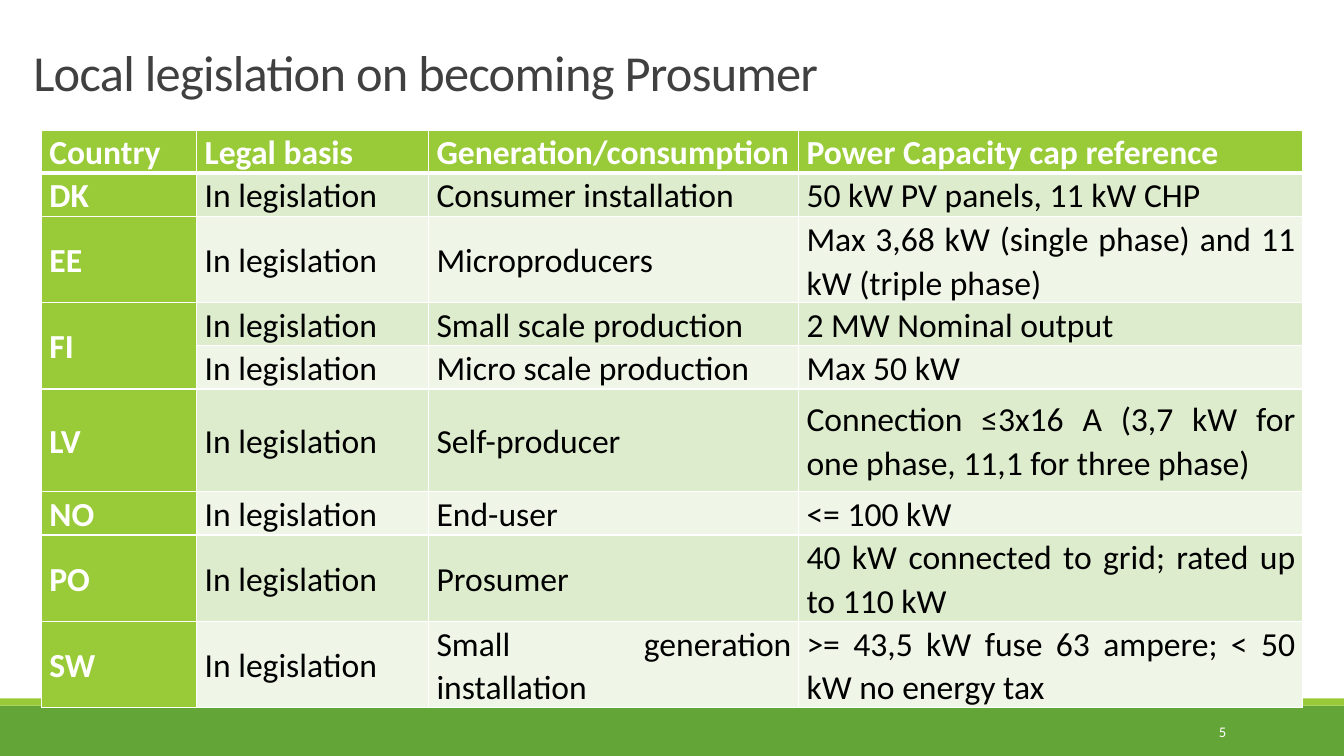
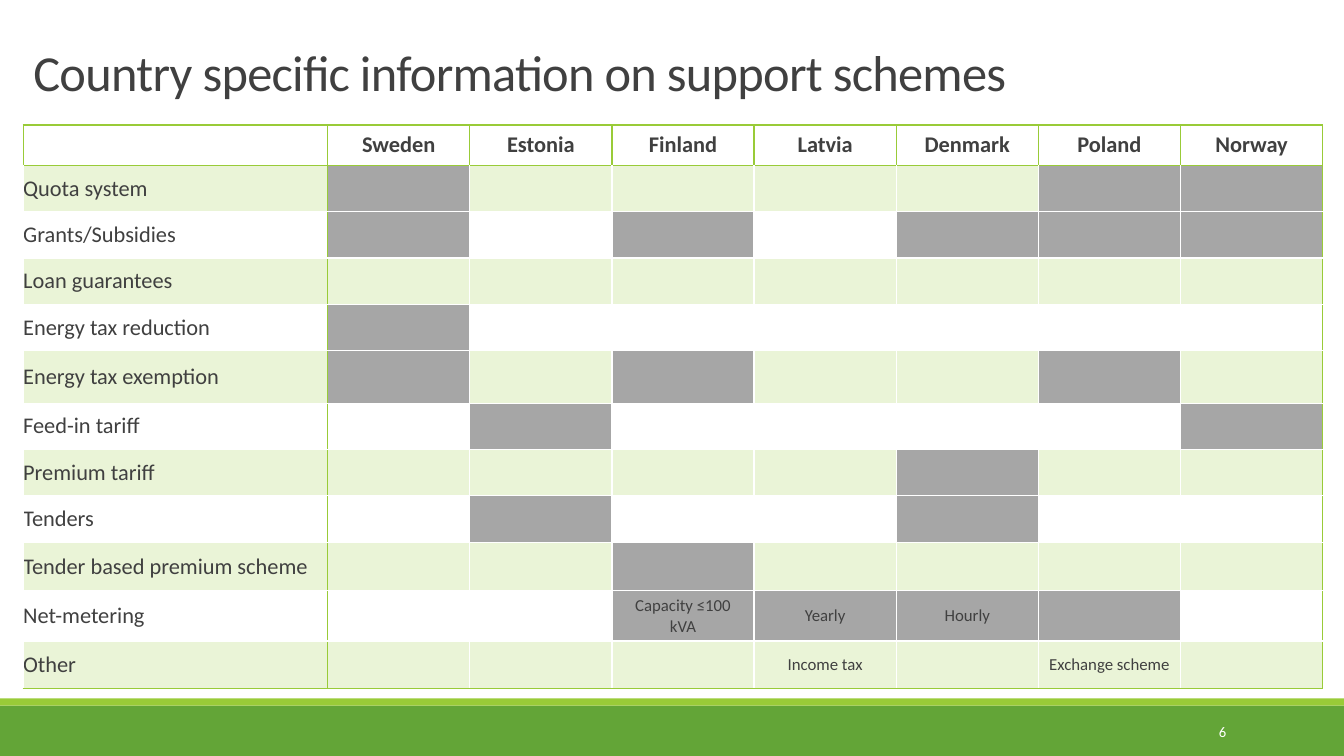
from dataclasses import dataclass

from lxml import etree
from pptx import Presentation
from pptx import util as u
from pptx.dml.color import RGBColor
from pptx.enum import shapes, text
from pptx.oxml.ns import qn

ALIGN = text.PP_ALIGN
MIDDLE = text.MSO_ANCHOR.MIDDLE


@dataclass(frozen=True)
class Theme:
    font: str = "Calibri"
    white: str = "FFFFFF"
    black: str = "000000"
    ink: str = "404040"
    lime: str = "99CB38"
    green: str = "63A537"
    grey: str = "A6A6A6"
    band_dark: str = "DEECCE"
    band_light: str = "EFF6E8"
    title_pt: float = 36
    large_pt: float = 24
    body_pt: float = 16
    note_pt: float = 12
    number_pt: float = 10.5


T = Theme()

LEGISLATION = [
    ("Country", "Legal basis", "Generation/consumption", "Power Capacity cap reference"),
    ("DK", "In legislation", "Consumer installation", "50 kW PV panels, 11 kW CHP"),
    ("EE", "In legislation", "Microproducers",
     "Max 3,68 kW (single phase) and 11 kW (triple phase)"),
    ("FI", "In legislation", "Small scale production", "2 MW Nominal output"),
    ("", "In legislation", "Micro scale production", "Max 50 kW"),
    ("LV", "In legislation", "Self-producer",
     "Connection ≤3x16 A (3,7 kW for one phase, 11,1 for three phase)"),
    ("NO", "In legislation", "End-user", "<= 100 kW"),
    ("PO", "In legislation", "Prosumer", "40 kW connected to grid; rated up to 110 kW"),
    ("SW", "In legislation", "Small generation installation",
     ">= 43,5 kW fuse 63 ampere; < 50 kW no energy tax"),
]

COUNTRIES = ["Sweden", "Estonia", "Finland", "Latvia", "Denmark", "Poland", "Norway"]

# Scheme, row height, countries that use it (#)
SCHEMES = [
    ("Quota system", 0.46, "#....##"),
    ("Grants/Subsidies", 0.46, "#.#.###"),
    ("Loan guarantees", 0.46, "......."),
    ("Energy tax reduction", 0.46, "#......"),
    ("Energy tax exemption", 0.52, "#.#..#."),
    ("Feed-in tariff", 0.46, ".#....#"),
    ("Premium tariff", 0.46, "....#.."),
    ("Tenders", 0.46, ".#..#.."),
    ("Tender based premium scheme", 0.48, "..#...."),
    ("Net-metering", 0.46, "..####."),
    ("Other", 0.47, "......."),
]

SCHEME_NOTES = {
    ("Net-metering", "Finland"): "Capacity ≤100 kVA",
    ("Net-metering", "Latvia"): "Yearly",
    ("Net-metering", "Denmark"): "Hourly",
    ("Other", "Latvia"): "Income tax",
    ("Other", "Poland"): "Exchange scheme",
}


def rgb(color):
    return RGBColor.from_string(color)


def style(p, size, color, bold=False, align=ALIGN.LEFT):
    p.alignment = align
    p.font.name = T.font
    p.font.size = u.Pt(size)
    p.font.bold = bold
    p.font.color.rgb = rgb(color)


def margins(target, x, y):
    target.margin_left = target.margin_right = u.Inches(x)
    target.margin_top = target.margin_bottom = u.Inches(y)


# Shared slide parts
def add_band(s, top, height, color):
    sp = s.shapes.add_shape(shapes.MSO_SHAPE.RECTANGLE, 0, u.Inches(top),
                            u.Inches(13.33), u.Inches(height))
    sp.shadow.inherit = False
    sp.fill.solid()
    sp.fill.fore_color.rgb = rgb(color)
    sp.line.fill.background()


def add_number(s, number):
    sp = s.shapes.add_textbox(u.Inches(10.83), u.Inches(7.06),
                              u.Inches(1.43), u.Inches(0.4))
    tf = sp.text_frame
    tf.word_wrap = True
    tf.vertical_anchor = MIDDLE
    p = tf.paragraphs[0]
    p.text = str(number)
    style(p, T.number_pt, T.white, align=ALIGN.RIGHT)


def add_slide(prs, title, number):
    s = prs.slides.add_slide(prs.slide_layouts[5])
    add_band(s, 7, 0.5, T.green)
    add_band(s, 6.93, 0.07, T.lime)
    sp = s.shapes.title
    sp.left, sp.top = u.Inches(0.23), u.Inches(0.27)
    sp.width, sp.height = u.Inches(11), u.Inches(0.79)
    tf = sp.text_frame
    tf.auto_size = text.MSO_AUTO_SIZE.NONE
    tf.vertical_anchor = text.MSO_ANCHOR.BOTTOM
    p = tf.paragraphs[0]
    p.line_spacing = 0.85
    r = p.add_run()
    r.text = title
    r._r.get_or_add_rPr().set("spc", "-50")
    style(p, T.title_pt, T.ink)
    add_number(s, number)
    return s


# Table helpers
def add_grid(s, left, top, cols, rows):
    frame = s.shapes.add_table(len(rows), len(cols), u.Inches(left), u.Inches(top),
                               u.Inches(sum(cols)), u.Inches(sum(rows)))
    table = frame.table
    table.horz_banding = False
    for col, width in zip(table.columns, cols):
        col.width = u.Inches(width)
    for row, height in zip(table.rows, rows):
        row.height = u.Inches(height)
    return table


def set_borders(cell, **edges):
    """Draw L, R, T and B edges, each a (colour, points) pair; white by default."""
    tc_pr = cell._tc.get_or_add_tcPr()
    for side in "LRTB":
        color, points = edges.get(side, (T.white, 1))
        ln = etree.SubElement(tc_pr, qn(f"a:ln{side}"), w=str(u.Pt(points)))
        fill = etree.SubElement(ln, qn("a:solidFill"))
        etree.SubElement(fill, qn("a:srgbClr"), val=color)


def set_fill(cell, color, alpha=None):
    if color is None:
        cell.fill.background()
        return
    cell.fill.solid()
    cell.fill.fore_color.rgb = rgb(color)
    if alpha:
        clr = cell._tc.tcPr.find(f"{qn('a:solidFill')}/{qn('a:srgbClr')}")
        etree.SubElement(clr, qn("a:alpha"), val=str(alpha * 1000))


def set_text(cell, words, size, color, **look):
    cell.vertical_anchor = MIDDLE
    p = cell.text_frame.paragraphs[0]
    p.text = words
    style(p, size, color, **look)
    return p


# Legislation by country
def add_legislation_table(s, left, top):
    table = add_grid(s, left, top, [1.54, 2.3, 3.67, 5],
                     [0.39, 0.39, 0.79, 0.39, 0.39, 1.02, 0.39, 0.79, 0.79])
    for i, row in enumerate(LEGISLATION):
        for j, words in enumerate(row):
            cell = table.cell(i, j)
            margins(cell, 0.08, 0)
            cell.margin_right = u.Inches(0.07)
            head = i == 0 or j == 0
            line = (T.white, 3)
            edges = {"B": line} if i == 0 else {"T": line} if i == 1 else {}
            set_borders(cell, **edges)
            set_fill(cell, T.lime if head else T.band_dark if i % 2 else T.band_light)
            if words:
                p = set_text(cell, words, T.large_pt, T.white if head else T.black,
                             bold=head, align=ALIGN.JUSTIFY)
                p.line_spacing = 1.07
    table.cell(3, 0).merge(table.cell(4, 0))


# Support schemes by country
def add_scheme_table(s, left, top):
    rows = [0.4] + [height for _, height, _ in SCHEMES]
    cols = [3.02] + [1.41] * len(COUNTRIES)
    table = add_grid(s, left, top, cols, rows)
    last_row, last_col = len(rows) - 1, len(cols) - 1
    for i in range(len(rows)):
        for j in range(len(cols)):
            cell = table.cell(i, j)
            margins(cell, 0, 0)
            green = {"L": i == 0 or j == 1, "R": i == 0 or j in (0, last_col),
                     "T": i <= 1, "B": i in (0, last_row)}
            set_borders(cell, **{side: (T.lime, 1) for side, on in green.items() if on})
            if i == 0:
                set_fill(cell, None)
                if j:
                    set_text(cell, COUNTRIES[j - 1], T.body_pt, T.ink,
                             bold=True, align=ALIGN.CENTER)
                continue
            scheme, _, marks = SCHEMES[i - 1]
            if j and marks[j - 1] == "#":
                set_fill(cell, T.grey)
            elif i % 2:
                set_fill(cell, T.lime, alpha=20)
            else:
                set_fill(cell, None)
            if j == 0:
                set_text(cell, scheme, T.body_pt, T.ink)
            elif note := SCHEME_NOTES.get((scheme, COUNTRIES[j - 1])):
                margins(cell, 0.1, 0.05)
                set_text(cell, note, T.note_pt, T.ink, align=ALIGN.CENTER)


def main():
    prs = Presentation()
    prs.slide_width, prs.slide_height = u.Inches(13.33), u.Inches(7.5)
    s = add_slide(prs, "Local legislation on becoming Prosumer", 5)
    add_legislation_table(s, 0.41, 1.29)
    s = add_slide(prs, "Country specific information on support schemes", 6)
    add_scheme_table(s, 0.23, 1.24)
    prs.save("out.pptx")


if __name__ == "__main__":
    main()
